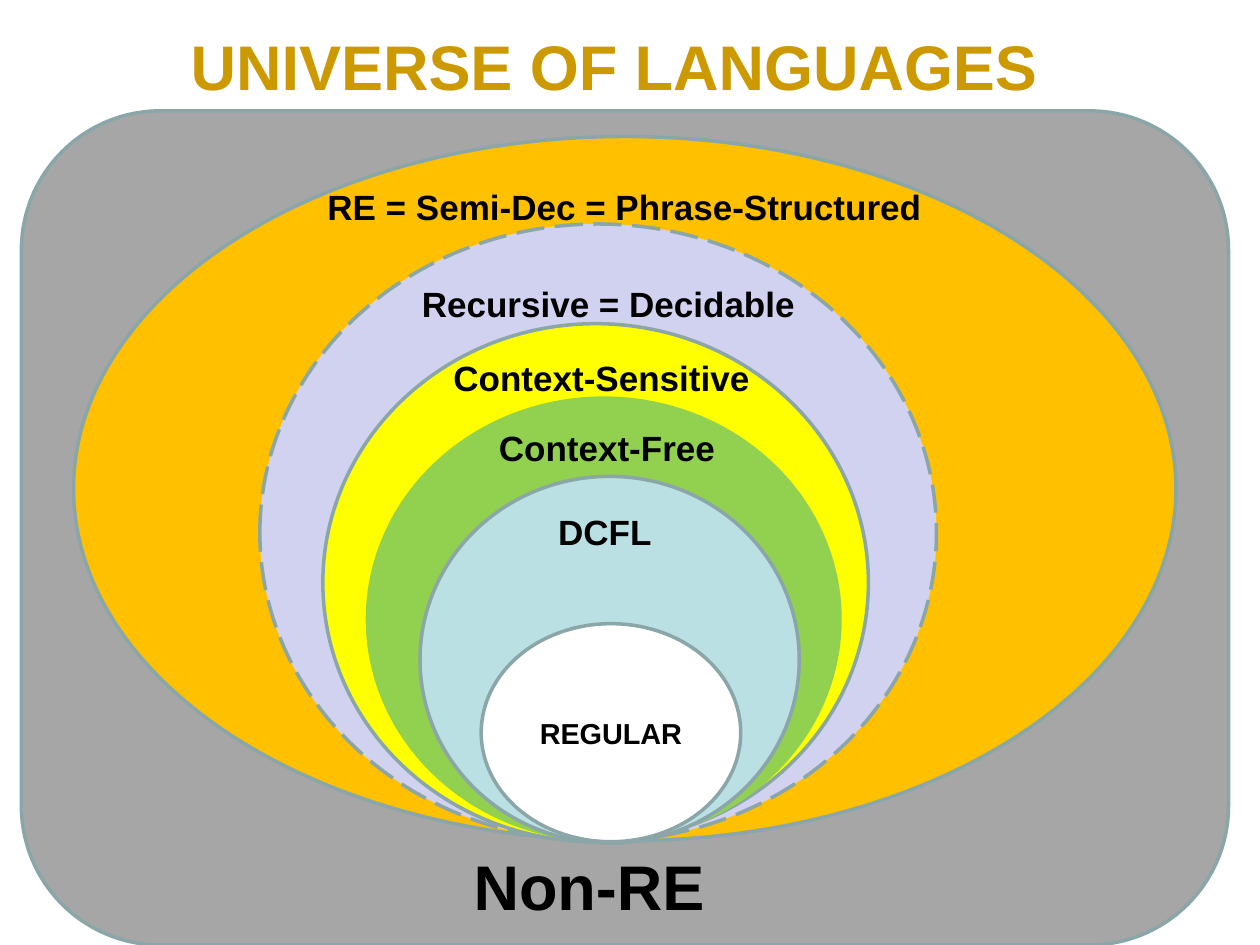
from dataclasses import dataclass
from typing import Any, Optional

import pptx
import pptx.util
from pptx.dml.color import RGBColor
from pptx.enum.dml import MSO_LINE
from pptx.enum.shapes import MSO_SHAPE
from pptx.enum.text import MSO_ANCHOR, PP_ALIGN
from pptx.util import Pt

GOLD = RGBColor(0xCC, 0x99, 0x00)
BLACK = RGBColor(0x00, 0x00, 0x00)
WHITE = RGBColor(0xFF, 0xFF, 0xFF)
GREY = RGBColor(0xA6, 0xA6, 0xA6)
ORANGE = RGBColor(0xFF, 0xC0, 0x00)
LAVENDER = RGBColor(0xD1, 0xD1, 0xF0)
YELLOW = RGBColor(0xFF, 0xFF, 0x00)
GREEN = RGBColor(0x92, 0xD0, 0x50)
PALE_TEAL = RGBColor(0xBB, 0xE0, 0xE3)
OUTLINE = RGBColor(0x8A, 0xA6, 0xA8)


@dataclass(frozen=True)
class Box:
    left: float
    top: float
    width: float
    height: float

    def lengths(self) -> list[pptx.util.Length]:
        return [Pt(v) for v in (self.left, self.top, self.width, self.height)]


@dataclass(frozen=True)
class Label:
    text: str
    box: Box
    size: float = 20


@dataclass(frozen=True)
class LanguageClass:
    region: Box
    fill: RGBColor
    label: Optional[Label] = None
    outline: RGBColor = OUTLINE
    dash: Optional[MSO_LINE] = None
    preset: MSO_SHAPE = MSO_SHAPE.OVAL


TITLE_BOX = Box(54, 12.24, 594, 51.12)
REGULAR_NAME = "REGULAR"
LANGUAGE_CLASSES = [
    LanguageClass(Box(12.24, 63.36, 689.76, 476.64), GREY,
                  Label("Non-RE", Box(263.5, 481, 174.25, 51.12), 36),
                  preset=MSO_SHAPE.ROUNDED_RECTANGLE),
    LanguageClass(Box(42, 78, 630, 402.5), ORANGE,
                  Label("RE = Semi-Dec = Phrase-Structured", Box(180, 102.24, 367.2, 31.7))),
    LanguageClass(Box(148.5, 128, 386.64, 352.8), LAVENDER,
                  Label("Recursive = Decidable", Box(234, 158, 228.24, 31.7)),
                  dash=MSO_LINE.LONG_DASH),
    LanguageClass(Box(184.5, 185, 311.76, 296), YELLOW,
                  Label("Context-Sensitive", Box(252, 200.2, 186.5, 31.7))),
    LanguageClass(Box(210, 227.5, 270, 252.7), GREEN,
                  Label("Context-Free", Box(278, 240, 148.3, 31.7)), outline=GREEN),
    LanguageClass(Box(240, 272.2, 216.7, 209.5), PALE_TEAL,
                  Label("DCFL", Box(311.8, 288, 72.7, 31.7))),
    LanguageClass(Box(275, 356.4, 148.3, 124.6), WHITE),
]


def apply_format(target: Any, values: dict[str, Any]) -> None:
    for attribute, value in values.items():
        setattr(target, attribute, value)


def write_text(frame: Any, text: str, size: float, color: RGBColor = BLACK,
               align: PP_ALIGN = PP_ALIGN.CENTER,
               anchor: MSO_ANCHOR = MSO_ANCHOR.TOP, wrap: bool = True) -> None:
    apply_format(frame, {"word_wrap": wrap, "vertical_anchor": anchor})
    paragraph = frame.paragraphs[0]
    paragraph.alignment = align
    run = paragraph.add_run()
    run.text = text
    apply_format(run.font, {"name": "Arial", "size": Pt(size), "bold": True})
    run.font.color.rgb = color


def draw_region(slide: Any, language_class: LanguageClass) -> Any:
    region = slide.shapes.add_shape(language_class.preset, *language_class.region.lengths())
    region.shadow.inherit = False
    region.fill.solid()
    region.fill.fore_color.rgb = language_class.fill
    region.line.color.rgb = language_class.outline
    apply_format(region.line, {"width": Pt(2), "dash_style": language_class.dash})
    return region


def draw_label(slide: Any, label: Label) -> None:
    caption = slide.shapes.add_textbox(*label.box.lengths())
    write_text(caption.text_frame, label.text, label.size, align=PP_ALIGN.LEFT, wrap=False)


def main() -> None:
    presentation = pptx.Presentation()
    apply_format(presentation, {"slide_width": Pt(720), "slide_height": Pt(540)})
    slide = presentation.slides.add_slide(presentation.slide_layouts[5])

    title = slide.shapes.title
    apply_format(title, dict(zip(("left", "top", "width", "height"), TITLE_BOX.lengths())))
    write_text(title.text_frame, "UNIVERSE OF LANGUAGES", 36, GOLD)

    for language_class in LANGUAGE_CLASSES:
        region = draw_region(slide, language_class)
        if language_class.label:
            draw_label(slide, language_class.label)
    write_text(region.text_frame, REGULAR_NAME, 16.5, anchor=MSO_ANCHOR.MIDDLE)

    presentation.save("out.pptx")


if __name__ == "__main__":
    main()
